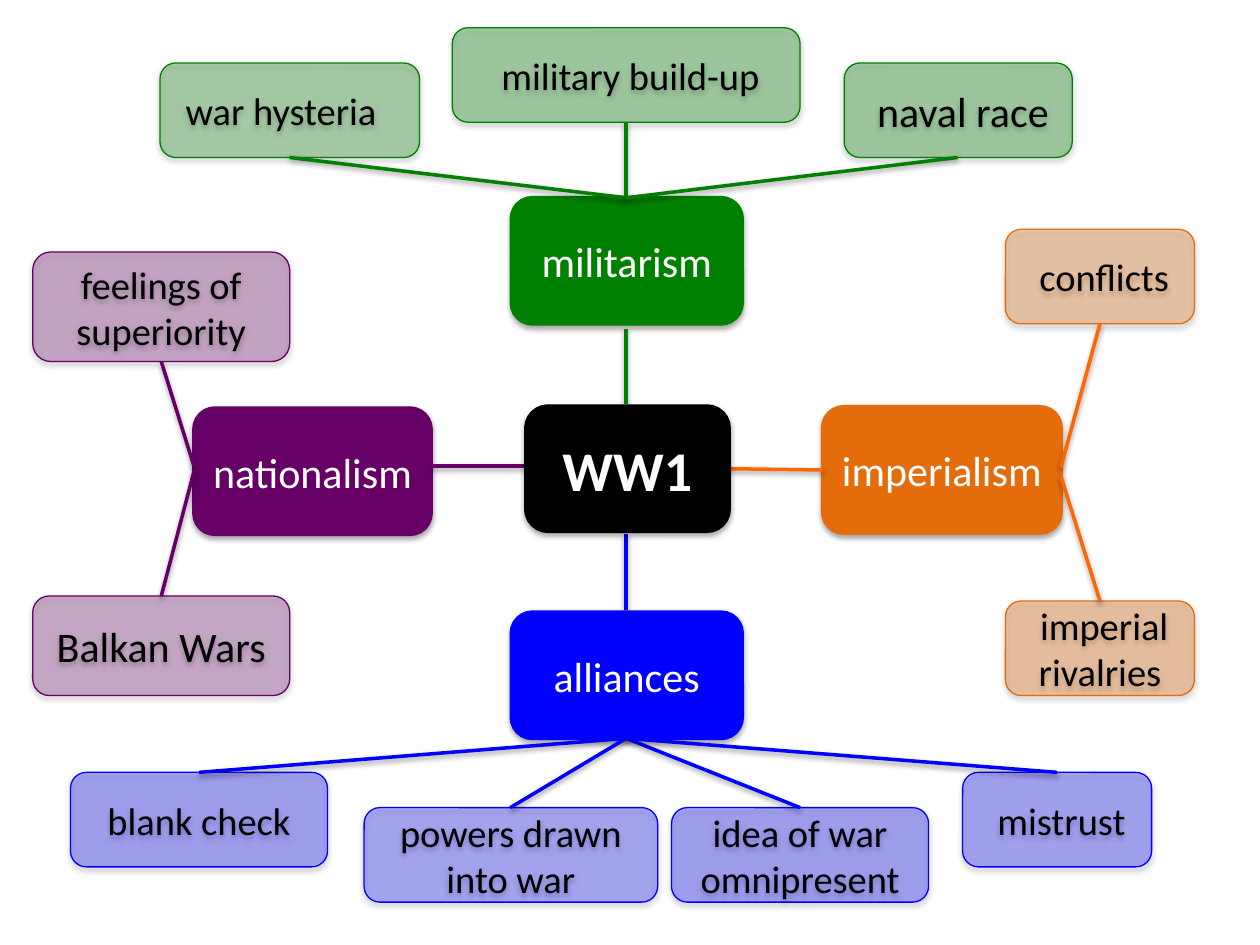
"""Build a mind map of the causes of WW1 as one slide."""
from lxml import etree
from pptx import Presentation
from pptx.dml.color import RGBColor
from pptx.enum.shapes import MSO_CONNECTOR, MSO_SHAPE
from pptx.enum.text import MSO_ANCHOR, PP_ALIGN
from pptx.oxml.ns import qn
from pptx.util import Emu, Pt

ROUND = MSO_SHAPE.ROUNDED_RECTANGLE
STRAIGHT = MSO_CONNECTOR.STRAIGHT
MIDDLE = MSO_ANCHOR.MIDDLE
LEFT, CENTER = PP_ALIGN.LEFT, PP_ALIGN.CENTER
PX = 9144

COLORS = {
    "black": "000000", "white": "FFFFFF", "purple": "660066", "green": "008000",
    "blue": "0000FF", "orange": "E46C0A", "bright orange": "FF6600",
}
FORMATS = {
    "core": {"name": "Calibri", "size": Pt(32), "bold": True},
    "hub": {"name": "Calibri", "size": Pt(24)},
    "leaf": {"name": "Calibri", "size": Pt(22)},
    "big leaf": {"name": "Calibri", "size": Pt(24)},
}

BRANCHES = [
    {"hub": "nationalism", "box": (154, 324, 188, 100), "color": "purple",
     "line": "purple", "trunk": (342, 370, 419, 370), "leaves": [
         ("feelings of superiority", (26, 200, 204, 87), 29, (154, 370), "leaf", CENTER),
         ("Balkan Wars", (26, 473, 204, 79), 28, (154, 374), "big leaf", CENTER)]},
    {"hub": "militarism", "box": (406, 157, 183, 100), "color": "green",
     "line": "green", "trunk": (497, 321, 497, 261), "leaves": [
         (" war hysteria", (127, 50, 206, 75), 29, (497, 157), "leaf", LEFT),
         (" military build-up", (359, 22, 276, 75), 31, (497, 157), "leaf", CENTER),
         (" naval race", (670, 50, 181, 75), 31, (497, 157), "big leaf", CENTER)]},
    {"hub": "alliances", "box": (406, 486, 183, 100), "color": "blue",
     "line": "blue", "trunk": (497, 484, 497, 424), "leaves": [
         ("blank check", (56, 613, 204, 75), 31, (497, 586), "leaf", CENTER),
         ("powers drawn into war", (289, 641, 233, 75), 29, (497, 586), "leaf", CENTER),
         ("idea of war omnipresent", (533, 641, 204, 75), 31, (497, 586), "leaf", CENTER),
         (" mistrust", (764, 613, 150, 75), 30, (497, 586), "leaf", CENTER)]},
    {"hub": "imperialism", "box": (653, 323, 189, 100), "color": "orange",
     "line": "bright orange", "trunk": (576, 372, 653, 373), "leaves": [
         (" conflicts", (798, 182, 150, 75), 30, (842, 371), "leaf", CENTER),
         (" imperial rivalries", (798, 477, 150, 75), 32, (842, 378), "leaf", CENTER)]},
]


class MindMap:
    """Hold the style and the slide, and draw boxes and lines on it."""

    def __init__(self, s):
        self.s = s

    def rgb(self, color):
        """Return the named colour."""
        return RGBColor.from_string(COLORS[color])

    def alpha(self, clr, percent):
        """Set the opacity of a colour element."""
        etree.SubElement(clr, qn("a:alpha"), val=str(percent * 1000))

    def shadow(self, sp, dist, percent):
        """Add a soft shadow straight below."""
        effects = etree.SubElement(sp._element.spPr, qn("a:effectLst"))
        outer = etree.SubElement(effects, qn("a:outerShdw"), blurRad="40000",
                                 dist=str(dist), dir="5400000", rotWithShape="0")
        clr = etree.SubElement(outer, qn("a:srgbClr"), val=COLORS["black"])
        self.alpha(clr, percent)

    def box(self, text, box, color, style, width, ink, opacity=100, align=CENTER):
        """Draw a rounded box with its label."""
        sp = self.s.shapes.add_shape(ROUND, *(Emu(v * PX) for v in box))
        sp.fill.solid()
        sp.fill.fore_color.rgb = self.rgb(color)
        if opacity < 100:
            self.alpha(sp._element.spPr.find(".//" + qn("a:srgbClr")), opacity)
        sp.line.color.rgb = self.rgb(color)
        sp.line.width = Pt(width)
        self.shadow(sp, 23000, 35)
        tf = sp.text_frame
        tf.word_wrap = True
        tf.vertical_anchor = MIDDLE
        p = tf.paragraphs[0]
        p.alignment = align
        r = p.add_run()
        r.text = text
        for key, value in FORMATS[style].items():
            setattr(r.font, key, value)
        r.font.color.rgb = self.rgb(ink)

    def line(self, points, color):
        """Draw a straight line between two points."""
        cxn = self.s.shapes.add_connector(STRAIGHT, *(Emu(v * PX) for v in points))
        cxn.line.color.rgb = self.rgb(color)
        cxn.line.width = Pt(2)
        self.shadow(cxn, 20000, 38)

    def twig(self, box, joint, color):
        """Join a hub to the near edge of a leaf."""
        x, y, w, h = box
        edge = y + h if joint[1] > y else y
        self.line((*joint, x + w // 2, edge), color)


def main():
    """Draw the whole map and save it."""
    prs = Presentation()
    prs.slide_width, prs.slide_height = Emu(1000 * PX), Emu(750 * PX)
    m = MindMap(prs.slides.add_slide(prs.slide_layouts[6]))
    for b in BRANCHES:
        m.box(b["hub"], b["box"], b["color"], "hub", 2.25, "white")
        for text, box, opacity, _, style, align in b["leaves"]:
            m.box(text, box, b["color"], style, 0.75, "black", opacity, align)
    for b in BRANCHES:
        m.line(b["trunk"], b["line"])
        for _, box, _, joint, _, _ in b["leaves"]:
            m.twig(box, joint, b["line"])
    m.box("WW1", (419, 324, 158, 96), "black", "core", 4.5, "white")
    prs.save("out.pptx")


if __name__ == "__main__":
    main()
